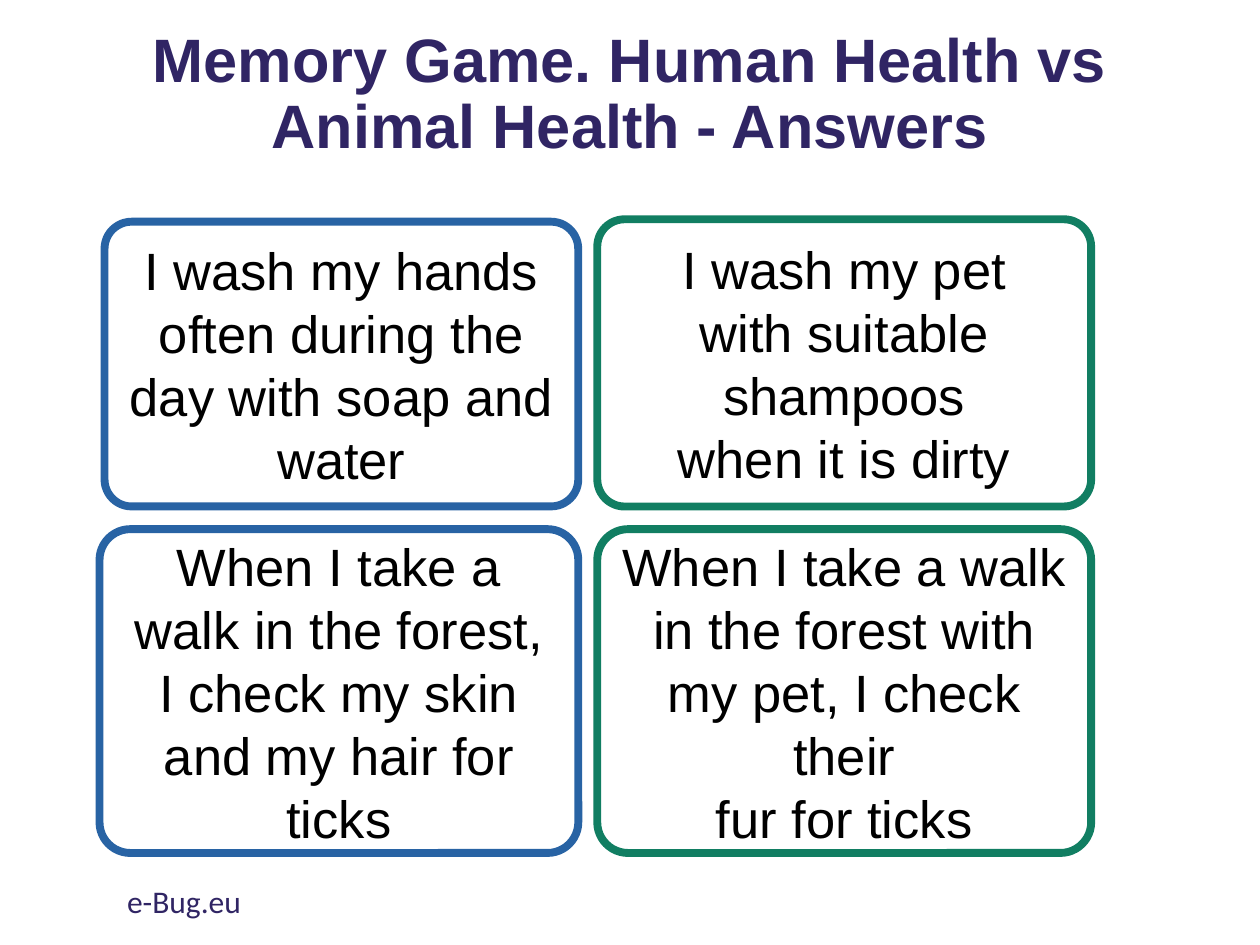
from pptx import Presentation
from pptx.dml.color import RGBColor
from pptx.enum.shapes import MSO_SHAPE
from pptx.enum.text import MSO_ANCHOR, PP_ALIGN
from pptx.util import Inches, Pt

CENTER, LEFT = PP_ALIGN.CENTER, PP_ALIGN.LEFT
MIDDLE, TOP = MSO_ANCHOR.MIDDLE, MSO_ANCHOR.TOP
ROUNDED = MSO_SHAPE.ROUNDED_RECTANGLE

# Content
NAVY, BLUE, GREEN, BLACK = "302564", "2863A4", "117E62", "000000"
TITLE = "Memory Game. Human Health vs Animal Health - Answers"
FOOTER = "e-Bug.eu"
CARDS = [  # left, top, right, bottom, outline colour, text
    (0.83, 1.76, 4.59, 4.02, BLUE,
     "I wash my hands often during the day with soap and water"),
    (4.74, 1.74, 8.66, 4.02, GREEN,
     "I wash my pet\nwith suitable\nshampoos\nwhen it is dirty"),
    (0.79, 4.2, 4.59, 6.77, BLUE,
     "When I take a walk in the forest, I check my skin and my hair for ticks"),
    (4.74, 4.2, 8.66, 6.77, GREEN,
     "When I take a walk\nin the forest with\nmy pet, I check their\nfur for ticks"),
]


def rgb(color):
    return RGBColor.from_string(color)


def write_text(shape, text, size, color, font="Arial", align=CENTER,
               anchor=MIDDLE, bold=False, line_spacing=None):
    frame = shape.text_frame
    frame.word_wrap = True
    frame.vertical_anchor = anchor
    frame.text = text
    for paragraph in frame.paragraphs:
        paragraph.alignment = align
        paragraph.line_spacing = line_spacing
        for run in paragraph.runs:
            run.font.name = font
            run.font.size = Pt(size)
            run.font.bold = bold
            run.font.color.rgb = rgb(color)


def add_text(slide, left, top, width, height, text, size, color, **style):
    box = slide.shapes.add_textbox(*map(Inches, (left, top, width, height)))
    write_text(box, text, size, color, **style)


def add_card(slide, left, top, right, bottom, color, text):
    card = slide.shapes.add_shape(
        ROUNDED, *map(Inches, (left, top, right - left, bottom - top)))
    card.adjustments[0] = 0.095
    card.shadow.inherit = False
    card.fill.background()
    card.line.color.rgb = rgb(color)
    card.line.width = Pt(4.5)
    write_text(card, text, 30, BLACK)


def main():
    presentation = Presentation()
    presentation.slide_width, presentation.slide_height = Inches(10), Inches(7.5)
    slide = presentation.slides.add_slide(presentation.slide_layouts[6])

    # Title
    add_text(slide, 0.7, 0.36, 8.6, 0.8, TITLE, 35, NAVY,
             bold=True, line_spacing=0.9)

    # Answer cards
    for card in CARDS:
        add_card(slide, *card)

    # Footer
    add_text(slide, 0.91, 6.95, 3.38, 0.4, FOOTER, 18, NAVY,
             font="Calibri", align=LEFT, anchor=TOP)

    presentation.save("out.pptx")


if __name__ == "__main__":
    main()
